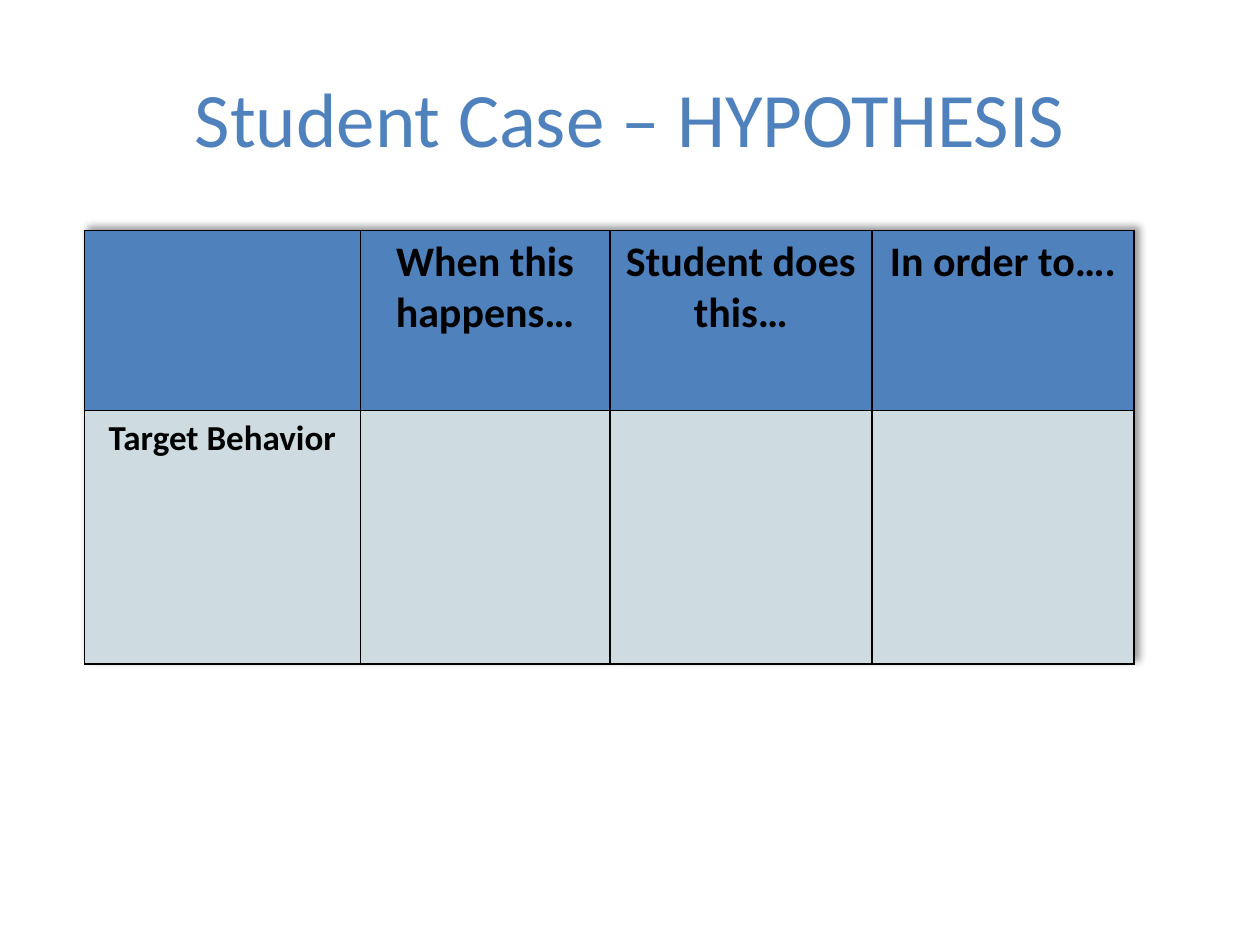
import pptx
import pptx.util
import pptx.dml.color
import pptx.enum.text
import pptx.oxml
import pptx.oxml.ns
from pptx.util import Inches

RGBColor = pptx.dml.color.RGBColor
BLUE = RGBColor(0x4F, 0x81, 0xBD)
PALE = RGBColor(0xCE, 0xDC, 0xE1)
BLACK = RGBColor(0, 0, 0)
SPACE = pptx.oxml.ns.nsdecls("a")


def write(frame, text, size, color, bold=False):
    line = frame.paragraphs[0]
    line.alignment = pptx.enum.text.PP_ALIGN.CENTER
    run = line.add_run()
    run.text = text
    run.font.name = "Calibri"
    run.font.size = pptx.util.Pt(size)
    run.font.bold = bold
    run.font.color.rgb = color


deck = pptx.Presentation()
deck.slide_width = Inches(10)
deck.slide_height = Inches(7.5)
slide = deck.slides.add_slide(deck.slide_layouts[6])

title = slide.shapes.add_textbox(Inches(0.5), Inches(0.3), Inches(9), Inches(1.25))
title.text_frame.word_wrap = True
title.text_frame.vertical_anchor = pptx.enum.text.MSO_ANCHOR.MIDDLE
write(title.text_frame, "Student Case – HYPOTHESIS", 44, BLUE)

rows = [
    ["", "When this happens…", "Student does this…", "In order to…."],
    ["Target Behavior", "", "", ""],
]
looks = [(BLUE, 24), (PALE, 20)]
table = slide.shapes.add_table(
    2, 4, Inches(0.67), Inches(1.83), Inches(8.33), Inches(3.44)
).table
for col, width in zip(table.columns, [2.19, 1.98, 2.08, 2.08]):
    col.width = Inches(width)
for row, height in zip(table.rows, [1.43, 2.01]):
    row.height = Inches(height)

shadow = pptx.oxml.parse_xml(
    f'<a:effectLst {SPACE}><a:outerShdw blurRad="50800" dist="38100" dir="18900000" '
    'algn="bl" rotWithShape="0"><a:srgbClr val="000000"><a:alpha val="40000"/>'
    "</a:srgbClr></a:outerShdw></a:effectLst>"
)
table._tbl.tblPr.insert(0, shadow)

for r, (texts, (fill, size)) in enumerate(zip(rows, looks)):
    for c, text in enumerate(texts):
        cell = table.cell(r, c)
        if text:
            write(cell.text_frame, text, size, BLACK, True)
        cell.fill.solid()
        cell.fill.fore_color.rgb = fill
        props = cell._tc.get_or_add_tcPr()
        for spot, side in enumerate(["lnL", "lnR", "lnT", "lnB"]):
            edge = pptx.oxml.parse_xml(
                f'<a:{side} {SPACE} w="12700"><a:solidFill>'
                f'<a:srgbClr val="{BLACK}"/></a:solidFill></a:{side}>'
            )
            props.insert(spot, edge)

deck.save("out.pptx")
